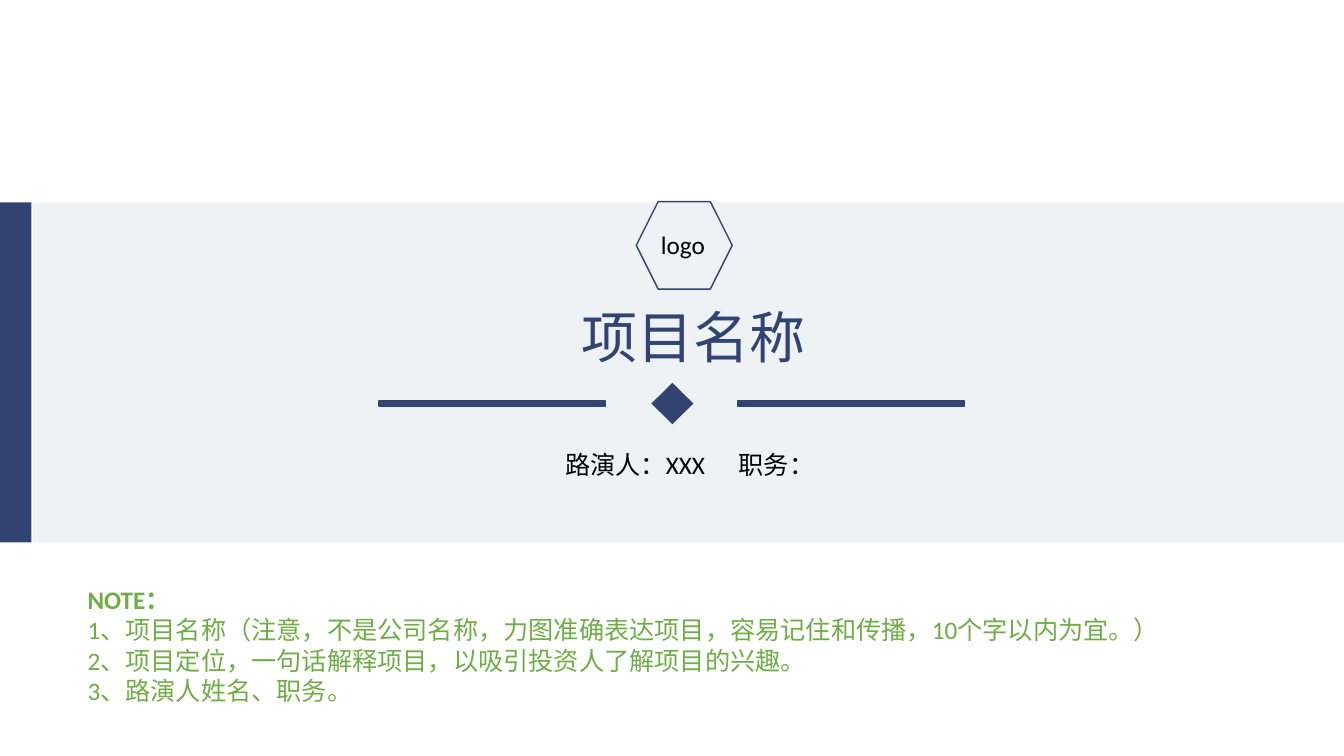
from lxml import etree
from pptx import Presentation
from pptx.dml.color import RGBColor
from pptx.enum.shapes import MSO_SHAPE
from pptx.enum.text import MSO_ANCHOR, MSO_AUTO_SIZE, PP_ALIGN
from pptx.oxml.ns import qn
from pptx.util import Pt

RECT, HEX, GEM = MSO_SHAPE.RECTANGLE, MSO_SHAPE.HEXAGON, MSO_SHAPE.DIAMOND
BOTTOM, GROW = MSO_ANCHOR.BOTTOM, MSO_AUTO_SIZE.SHAPE_TO_FIT_TEXT
CENTER = PP_ALIGN.CENTER
COLORS = {"navy": "304371", "band": "EEF2F5", "pale": "F2F2F2",
          "black": "000000", "green": "70AD47"}
NOTES = ["NOTE：",
         "1、项目名称（注意，不是公司名称，力图准确表达项目，容易记住和传播，10个字以内为宜。）",
         "2、项目定位，一句话解释项目，以吸引投资人了解项目的兴趣。",
         "3、路演人姓名、职务。"]


def color(name):
    """Return the named colour."""
    return RGBColor.from_string(COLORS[name])


def style(par, size, tint, face="Calibri", bold=False):
    """Set the font of a paragraph."""
    font = par.font
    font.size, font.name, font.bold = Pt(size), face, bold
    font.color.rgb = color(tint)


def add_shape(shapes, kind, box, fill=None, line=None):
    """Add a flat shape with an optional fill and outline."""
    shape = shapes.add_shape(kind, *map(Pt, box))
    shape.shadow.inherit = False
    if fill:
        shape.fill.solid()
        shape.fill.fore_color.rgb = color(fill)
    else:
        shape.fill.background()
    if line:
        shape.line.color.rgb = color(line)
        shape.line.width = Pt(1)
    else:
        shape.line.fill.background()


def add_text(shapes, box, lines, tint="black"):
    """Add a text box with one paragraph per line."""
    frame = shapes.add_textbox(*map(Pt, box)).text_frame
    frame.word_wrap = True
    frame.auto_size = GROW
    frame.text = "\n".join(lines)
    for par in frame.paragraphs:
        style(par, 18, tint, bold=par.text.startswith("NOTE"))
    return frame


def add_tab(par, stop):
    """Give a paragraph one left tab stop."""
    props = par.font._element.getparent()
    tabs = etree.Element(qn("a:tabLst"))
    etree.SubElement(tabs, qn("a:tab"), pos=str(Pt(stop)), algn="l")
    props.insert(0, tabs)


def set_title(slide, box, text):
    """Place the title above the bands and format it."""
    title = slide.shapes.title
    title.left, title.top, title.width, title.height = map(Pt, box)
    frame = title.text_frame
    frame.text = text
    frame.vertical_anchor = BOTTOM
    par = frame.paragraphs[0]
    par.alignment, par.line_spacing = CENTER, 0.9
    style(par, 40, "navy", "Noto Sans CJK SC")
    title.element.getparent().append(title.element)


def add_rule(shapes):
    """Add the divider: two bars on pale bars, and a diamond."""
    group = shapes.add_group_shape().shapes
    for shift, fill, line in ((0.7, "pale", None), (0, "navy", "navy")):
        for left in (270.7, 527):
            box = (left + shift, 286.5 + shift, 162, 3.6)
            add_shape(group, RECT, box, fill, line)
    add_shape(group, GEM, (465.3, 273.5, 30, 29.5), "navy")


def main():
    """Build the cover slide."""
    deck = Presentation()
    deck.slide_width, deck.slide_height = Pt(960), Pt(540)
    slide = deck.slides.add_slide(deck.slide_layouts[5])
    shapes = slide.shapes
    add_shape(shapes, RECT, (-1.5, 144.5, 24, 243), "navy")
    add_shape(shapes, RECT, (23.5, 144.5, 936.5, 243), "band")
    add_shape(shapes, HEX, (454.5, 144, 68.5, 62.5), line="navy")
    set_title(slide, (242, 204, 507, 64.5), "项目名称")
    add_rule(shapes)
    add_text(shapes, (465, 160, 63.5, 29), ["logo"])
    frame = add_text(shapes, (396.5, 317.5, 201, 29), ["路演人：XXX\t职务："])
    add_tab(frame.paragraphs[0], 124)
    add_text(shapes, (55.5, 414, 880, 94.5), NOTES, "green")
    deck.save("out.pptx")


if __name__ == "__main__":
    main()
